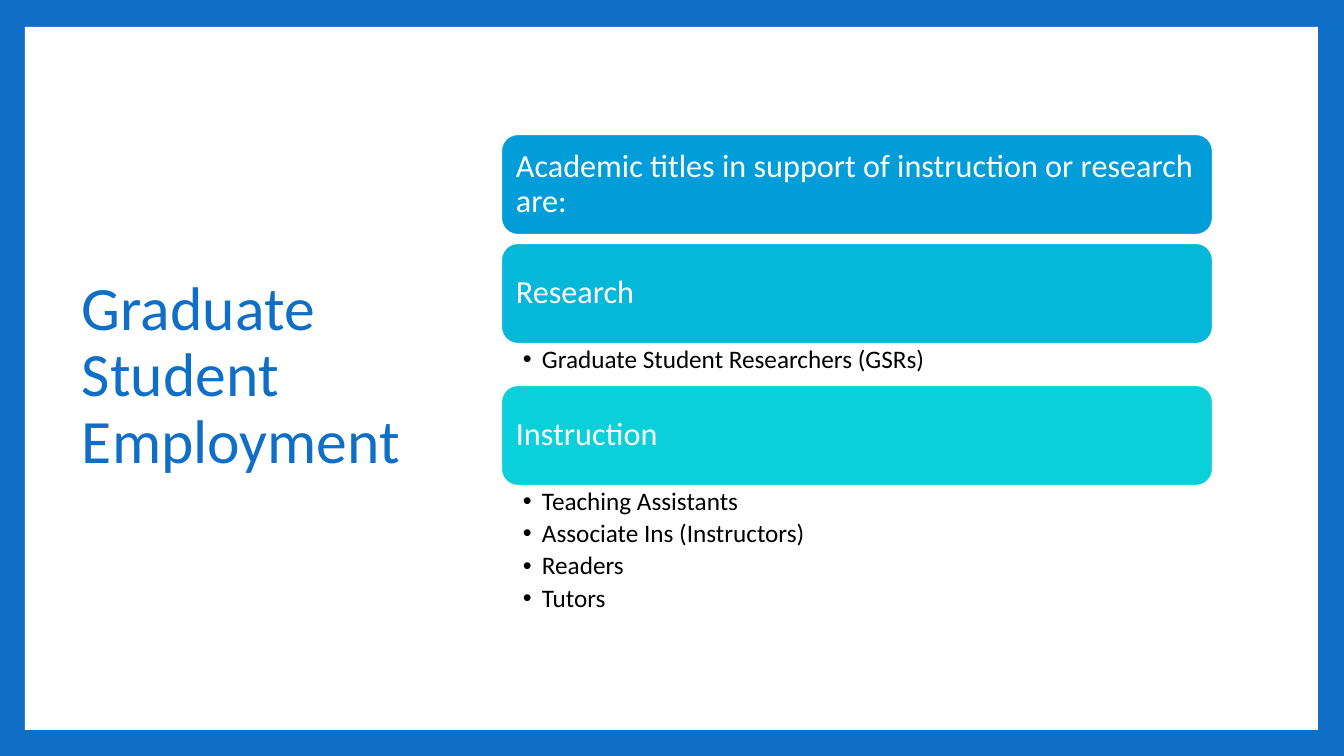
from lxml import etree
from pptx import Presentation
from pptx import util as u
from pptx.dml.color import RGBColor
from pptx.enum import shapes, text
from pptx.oxml.ns import qn

PX = 12192000 / 1344
BLUE = RGBColor(0x0F, 0x6F, 0xC6)
WHITE = RGBColor(0xFF, 0xFF, 0xFF)
BLACK = RGBColor(0, 0, 0)
SKY = RGBColor(0x00, 0x9D, 0xD9)
CYAN = RGBColor(0x05, 0xB7, 0xD9)
TURQUOISE = RGBColor(0x0B, 0xD0, 0xD9)

BAR_LEFT, BAR_WIDTH, BAR_HEIGHT = 501, 712, 101
HANGING = round(19 * PX)


def px(*lengths):
    return [round(length * PX) for length in lengths]


def write(frame, lines, size, color, insets, bullet=False):
    """Fill a text frame with one paragraph per line; insets are left, top, right, bottom."""
    frame.word_wrap = True
    (frame.margin_left, frame.margin_top,
     frame.margin_right, frame.margin_bottom) = px(*insets)
    for i, line in enumerate(lines):
        paragraph = frame.add_paragraph() if i else frame.paragraphs[0]
        if bullet:
            properties = paragraph._p.get_or_add_pPr()
            properties.set("marL", str(HANGING))
            properties.set("indent", str(-HANGING))
            etree.SubElement(properties, qn("a:buFont")).set("typeface", "Arial")
            etree.SubElement(properties, qn("a:buChar")).set("char", "•")
            paragraph.space_after = u.Pt(3.5)
        paragraph.alignment = text.PP_ALIGN.LEFT
        paragraph.line_spacing = 0.9
        run = paragraph.add_run()
        run.text = line
        run.font.name = "Calibri"
        run.font.size = u.Pt(size)
        run.font.color.rgb = color


deck = Presentation()
deck.slide_width, deck.slide_height = px(1344, 756)
slide = deck.slides.add_slide(deck.slide_layouts[6])
slide.background.fill.solid()
slide.background.fill.fore_color.rgb = BLUE

panel = slide.shapes.add_shape(shapes.MSO_SHAPE.RECTANGLE, *px(25, 27, 1293, 703))
panel.shadow.inherit = False
panel.fill.solid()
panel.fill.fore_color.rgb = WHITE
panel.line.fill.background()

title = slide.shapes.add_textbox(*px(72, 68, 371, 618)).text_frame
title.vertical_anchor = text.MSO_ANCHOR.MIDDLE
write(title, ["Graduate Student Employment"], 44, BLUE, (10, 5, 10, 5))

sections = [
    (134, SKY, "Academic titles in support of instruction or research are:", []),
    (243, CYAN, "Research", ["Graduate Student Researchers (GSRs)"]),
    (385, TURQUOISE, "Instruction",
     ["Teaching Assistants", "Associate Ins (Instructors)", "Readers", "Tutors"]),
]
for top, color, heading, job_titles in sections:
    bar = slide.shapes.add_shape(shapes.MSO_SHAPE.ROUNDED_RECTANGLE,
                                 *px(BAR_LEFT, top, BAR_WIDTH, BAR_HEIGHT))
    bar.shadow.inherit = False
    bar.fill.solid()
    bar.fill.fore_color.rgb = color
    bar.line.color.rgb = WHITE
    bar.line.width = u.Pt(1.5)
    bar.text_frame.vertical_anchor = text.MSO_ANCHOR.MIDDLE
    write(bar.text_frame, [heading], 23, WHITE, (10, 10, 10, 10))
    if job_titles:
        listing = slide.shapes.add_textbox(
            *px(BAR_LEFT, top + BAR_HEIGHT, BAR_WIDTH, 10 + 32 * len(job_titles)))
        write(listing.text_frame, job_titles, 18, BLACK, (22, 3, 18, 3), bullet=True)

deck.save("out.pptx")
